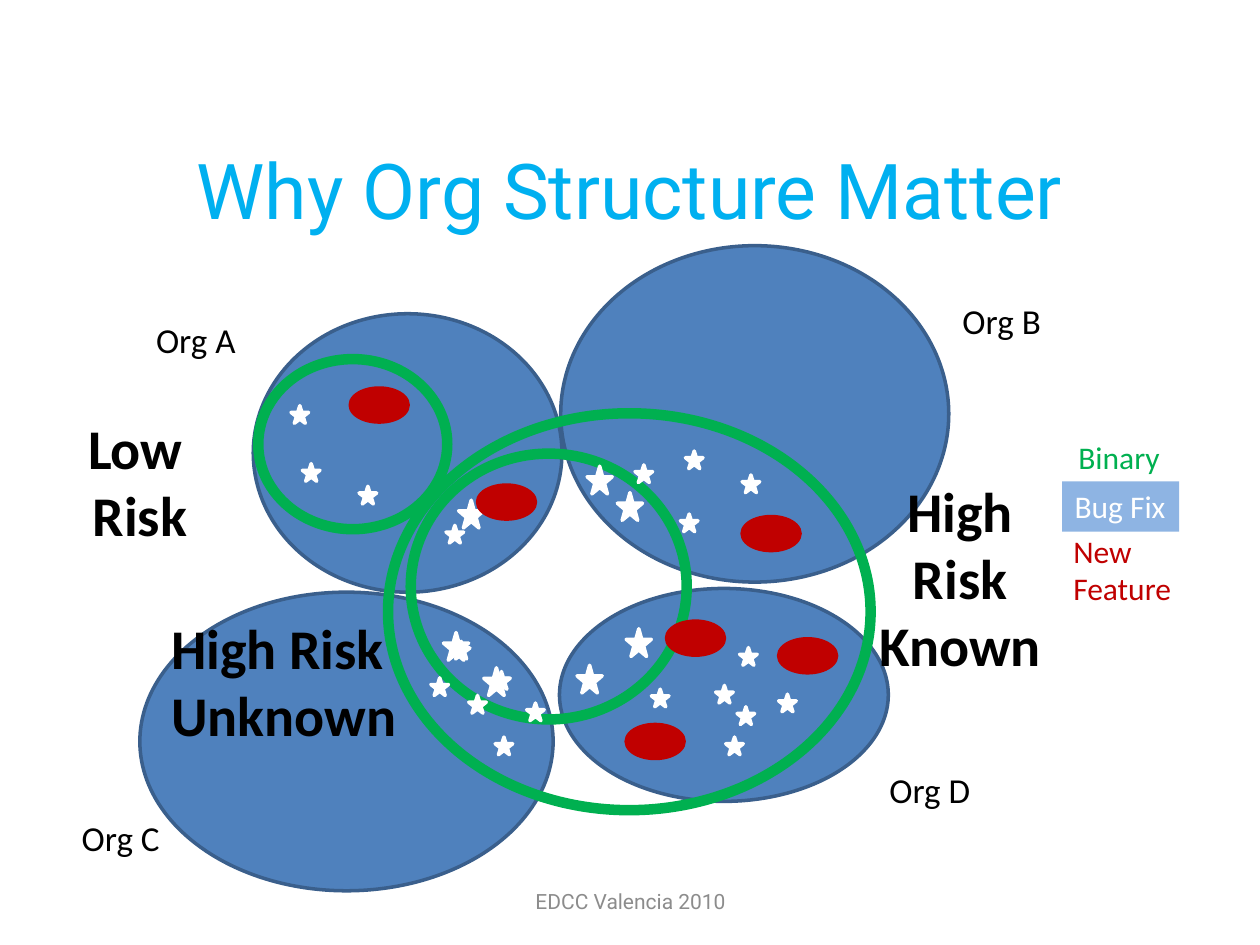
from pptx import Presentation
from pptx import util as u
from pptx.dml.color import RGBColor
from pptx.enum import shapes, text

COLS, ROWS = 100, 75
BLUE, EDGE, GREEN, RED = "4F81BD", "3A5F8C", "00B050", "C00000"
WHITE, BLACK = "FFFFFF", "000000"
LEFT, CENTER = text.PP_ALIGN.LEFT, text.PP_ALIGN.CENTER


def rgb(value):
    return RGBColor.from_string(value)


class Diagram:
    """Holds the style and the slide; lengths are grid columns and rows."""

    font = "Calibri"

    def __init__(self, prs):
        self.s = prs.slides.add_slide(prs.slide_layouts[6])
        self.col = prs.slide_width / COLS
        self.row = prs.slide_height / ROWS

    def box(self, x, y, w, h):
        return (u.Emu(round(x * self.col)), u.Emu(round(y * self.row)),
                u.Emu(round(w * self.col)), u.Emu(round(h * self.row)))

    def shape(self, kind, at, fill=None, line=None, width=2):
        sp = self.s.shapes.add_shape(kind, *self.box(*at))
        sp.shadow.inherit = False
        if fill:
            sp.fill.solid()
            sp.fill.fore_color.rgb = rgb(fill)
        else:
            sp.fill.background()
        if line:
            sp.line.color.rgb = rgb(line)
            sp.line.width = u.Pt(width)
        else:
            sp.line.fill.background()
        return sp

    def org(self, *at):
        self.shape(shapes.MSO_SHAPE.OVAL, at, BLUE, EDGE)

    def binary(self, *at, fill=None):
        self.shape(shapes.MSO_SHAPE.OVAL, at, fill, GREEN, 6)

    def features(self, places):
        for x, y in places:
            self.shape(shapes.MSO_SHAPE.OVAL, (x, y, 4.6, 2.7), RED, RED)

    def fixes(self, places, w=1.4, h=1.4):
        for x, y in places:
            self.shape(shapes.MSO_SHAPE.STAR_5_POINT, (x, y, w, h), WHITE, WHITE)

    def put_text(self, sp, lines, size, color, aligns=(LEFT,), font=None,
                 bold=False, wrap=False, anchor=text.MSO_ANCHOR.TOP):
        tf = sp.text_frame
        tf.word_wrap = wrap
        tf.auto_size = (text.MSO_AUTO_SIZE.NONE if wrap
                        else text.MSO_AUTO_SIZE.SHAPE_TO_FIT_TEXT)
        tf.vertical_anchor = anchor
        for i, line in enumerate(lines):
            p = tf.paragraphs[0] if i == 0 else tf.add_paragraph()
            p.add_run().text = line
            p.alignment = aligns[i % len(aligns)]
            p.font.name = font or self.font
            p.font.size = u.Pt(size)
            p.font.bold = bold
            p.font.color.rgb = rgb(color)

    def label(self, at, lines, size, color, **style):
        tb = self.s.shapes.add_textbox(*self.box(*at))
        self.put_text(tb, lines, size, color, **style)

    def heading(self, at, line, size, color):
        self.label(at, [line], size, color, aligns=(CENTER,), font="Roboto",
                   wrap=True, anchor=text.MSO_ANCHOR.MIDDLE)


def main():
    prs = Presentation()
    prs.slide_width, prs.slide_height = u.Inches(10), u.Inches(7.5)
    d = Diagram(prs)

    # Title and footer
    d.heading((5, 8.7, 90, 12.5), "Why Org Structure Matter", 44, "00B0F0")
    d.heading((34.2, 69.5, 31.7, 4), "EDCC Valencia 2010", 12, "8C8C8C")

    # Organisations
    d.org(20.1, 24.9, 24.5, 22.1)
    d.org(44.4, 46.7, 26.1, 16.9)
    d.org(11.1, 47, 32.8, 23.7)
    d.org(44.5, 19.5, 30.8, 26.7)
    for name, x, y in (("A", 11.4, 24.8), ("D", 69.6, 60.5),
                       ("C", 5.5, 64.3), ("B", 75.4, 23.3)):
        d.label((x, y, 9.5, 4.4), [f"Org {name}"], 20, BLACK)

    # Legend
    key = d.shape(shapes.MSO_SHAPE.RECTANGLE, (84.3, 38.2, 9.3, 4), "8EB4E3")
    d.put_text(key, ["Bug Fix"], 18, WHITE)
    d.label((84.2, 41.7, 10.7, 7.1), ["New", "Feature"], 18, RED)
    d.label((84.6, 34.3, 9.2, 4), ["Binary"], 18, GREEN)

    # Low risk: one binary inside one organisation
    d.binary(20.5, 28.5, 15, 13.5, fill=BLUE)
    d.features([(27.8, 30.8)])
    d.fixes([(24, 36.8), (28.5, 38.6), (23.1, 32.2)])

    # High risk, unknown: binary with bug fixes from every organisation
    d.binary(32.6, 36, 21.9, 21.1)
    d.fixes([(38.4, 53), (45.8, 52.8), (36.4, 39.7), (35.2, 50.2),
             (49.7, 49.9), (49, 39.1), (46.6, 37)], 2, 2.2)

    # Risk captions
    d.label((6, 32.3, 10.2, 11.8), ["Low", "Risk"], 32, BLACK,
            aligns=(LEFT, CENTER), bold=True, wrap=True)
    d.label((12.6, 48.2, 22.7, 11.8), ["High Risk", "Unknown"], 32, BLACK,
            bold=True)
    d.label((67.7, 37.3, 17, 17.2), ["High", "Risk", "Known"], 32, BLACK,
            aligns=(CENTER,), bold=True)

    # High risk, known: binary with new features and bug fixes
    d.binary(30.8, 32.8, 38.3, 31.5)
    d.features([(61.8, 50.7), (37.9, 38.5), (58.9, 41), (52.9, 49.3),
                (49.7, 57.5)])
    d.fixes([(35.9, 50.9), (54, 40.8), (35.4, 41.7), (58.7, 51.4),
             (57.6, 58.5), (54.4, 35.8), (56.8, 54.4), (58.9, 37.7),
             (61.8, 55.1), (51.7, 54.7), (58.5, 56.1), (50.4, 36.9),
             (37.2, 55.2), (39.1, 53.3), (39.3, 58.5), (41.8, 55.8),
             (34.2, 53.8)])

    prs.save("out.pptx")


if __name__ == "__main__":
    main()
